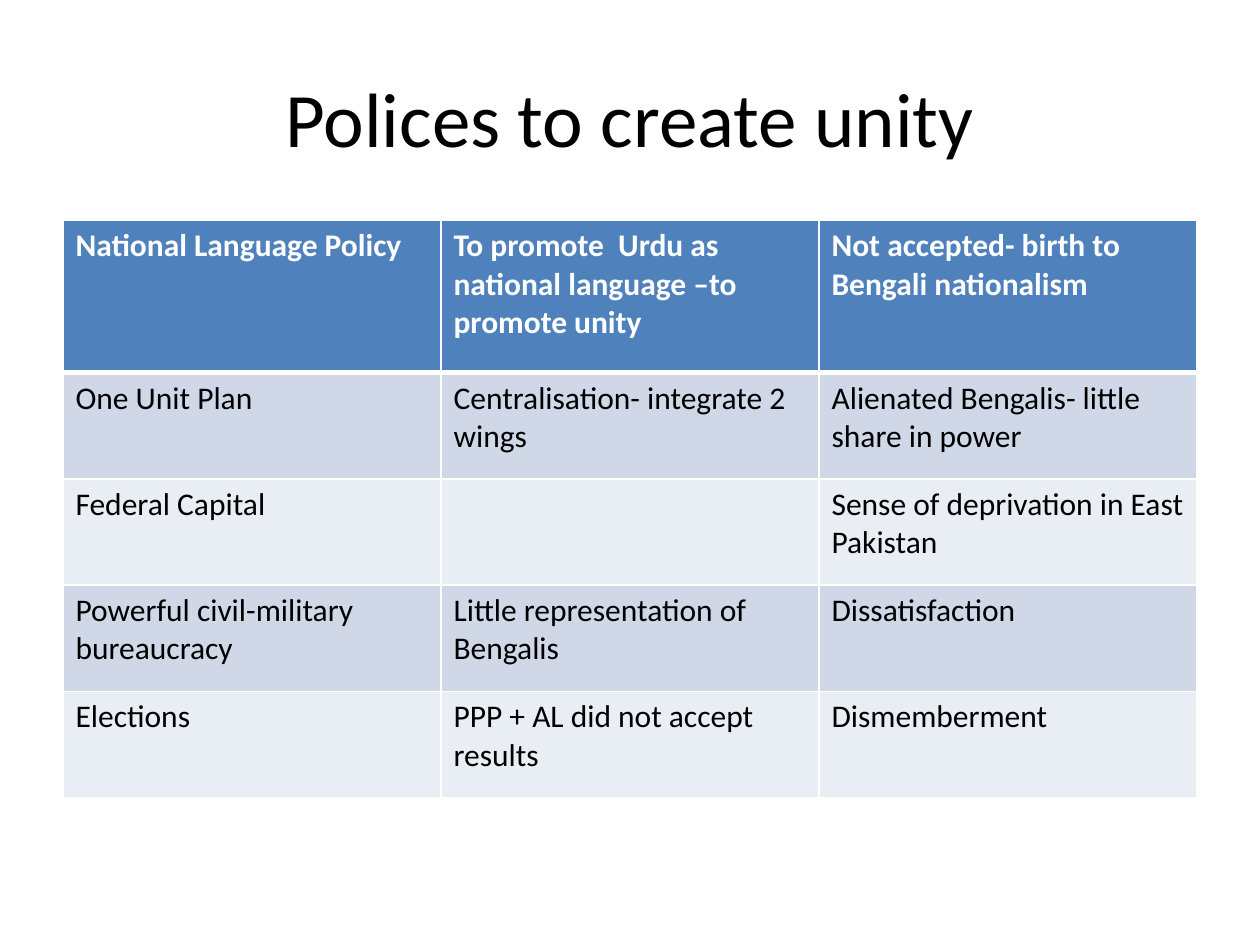
"""Build a slide with a titled table of policies, their aims and their outcomes."""
from dataclasses import dataclass

from lxml.etree import SubElement as Sub
from pptx import Presentation as Deck
from pptx.dml.color import RGBColor as Rgb
from pptx.enum.text import MSO_ANCHOR as Anchor, PP_ALIGN as Align
from pptx.oxml.ns import qn
from pptx.util import Pt

FONT = "Calibri"
HEX = {"white": "FFFFFF", "black": "000000", "head": "4F81BD",
       "dark": "D0D8E8", "light": "E9EDF4"}


@dataclass(frozen=True)
class Look:
    size: float
    ink: str
    bold: bool = False


@dataclass(frozen=True)
class Row:
    policy: str
    aim: str
    result: str

    def texts(self) -> tuple[str, str, str]:
        return self.policy, self.aim, self.result


ROWS = [
    Row("National Language Policy",
        "To promote  Urdu as  national language –to promote unity",
        "Not accepted- birth to Bengali nationalism"),
    Row("One Unit Plan", "Centralisation- integrate 2 wings",
        "Alienated Bengalis- little share in power"),
    Row("Federal Capital", "", "Sense of deprivation in East Pakistan"),
    Row("Powerful civil-military bureaucracy",
        "Little representation of Bengalis", "Dissatisfaction"),
    Row("Elections", "PPP + AL did not accept results", "Dismemberment"),
]
HEAD = Look(18, "white", True)
BODY = Look(18, "black")


def add_run(para, text: str, look: Look) -> None:
    run = para.add_run()
    run.text = text
    font = run.font
    font.name, font.size, font.bold = FONT, Pt(look.size), look.bold
    font.color.rgb = Rgb.from_string(HEX[look.ink])


def add_edge(cell, side: str, width: float) -> None:
    props = cell._tc.get_or_add_tcPr()
    line = Sub(props, qn(f"a:ln{side}"), w=str(Pt(width)))
    Sub(Sub(line, qn("a:solidFill")), qn("a:srgbClr"), val=HEX["white"])


def fill_cell(cell, text: str, look: Look, fill: str, top: float, base: float) -> None:
    for side, width in (("L", 1), ("R", 1), ("T", top), ("B", base)):
        add_edge(cell, side, width)
    cell.fill.solid()
    cell.fill.fore_color.rgb = Rgb.from_string(HEX[fill])
    para = cell.text_frame.paragraphs[0]
    if text:
        add_run(para, text, look)
    else:
        para.font.size = Pt(look.size)


def add_title(slide, text: str) -> None:
    title = slide.shapes.title
    title.left, title.top, title.width, title.height = Pt(36), Pt(21.6), Pt(648), Pt(90)
    frame = title.text_frame
    frame.word_wrap = True
    frame.vertical_anchor = Anchor.MIDDLE
    para = frame.paragraphs[0]
    para.alignment = Align.CENTER
    add_run(para, text, Look(44, "black"))


def add_grid(slide, rows: list[Row]) -> None:
    frame = slide.shapes.add_table(len(rows), 3, Pt(36), Pt(126), Pt(648), Pt(330))
    grid = frame.table
    for col in grid.columns:
        col.width = Pt(216)
    for i, row in enumerate(rows):
        grid.rows[i].height = Pt(60.7 if i else 87)
        look = BODY if i else HEAD
        fill = ("light", "dark")[i % 2] if i else "head"
        top, base = 3 if i == 1 else 1, 1 if i else 3
        for j, text in enumerate(row.texts()):
            fill_cell(grid.cell(i, j), text, look, fill, top, base)


def main() -> None:
    deck = Deck()
    deck.slide_width, deck.slide_height = Pt(720), Pt(540)
    slide = deck.slides.add_slide(deck.slide_layouts.get_by_name("Title Only"))
    add_title(slide, "Polices to create unity")
    add_grid(slide, ROWS)
    deck.save("out.pptx")


if __name__ == "__main__":
    main()
